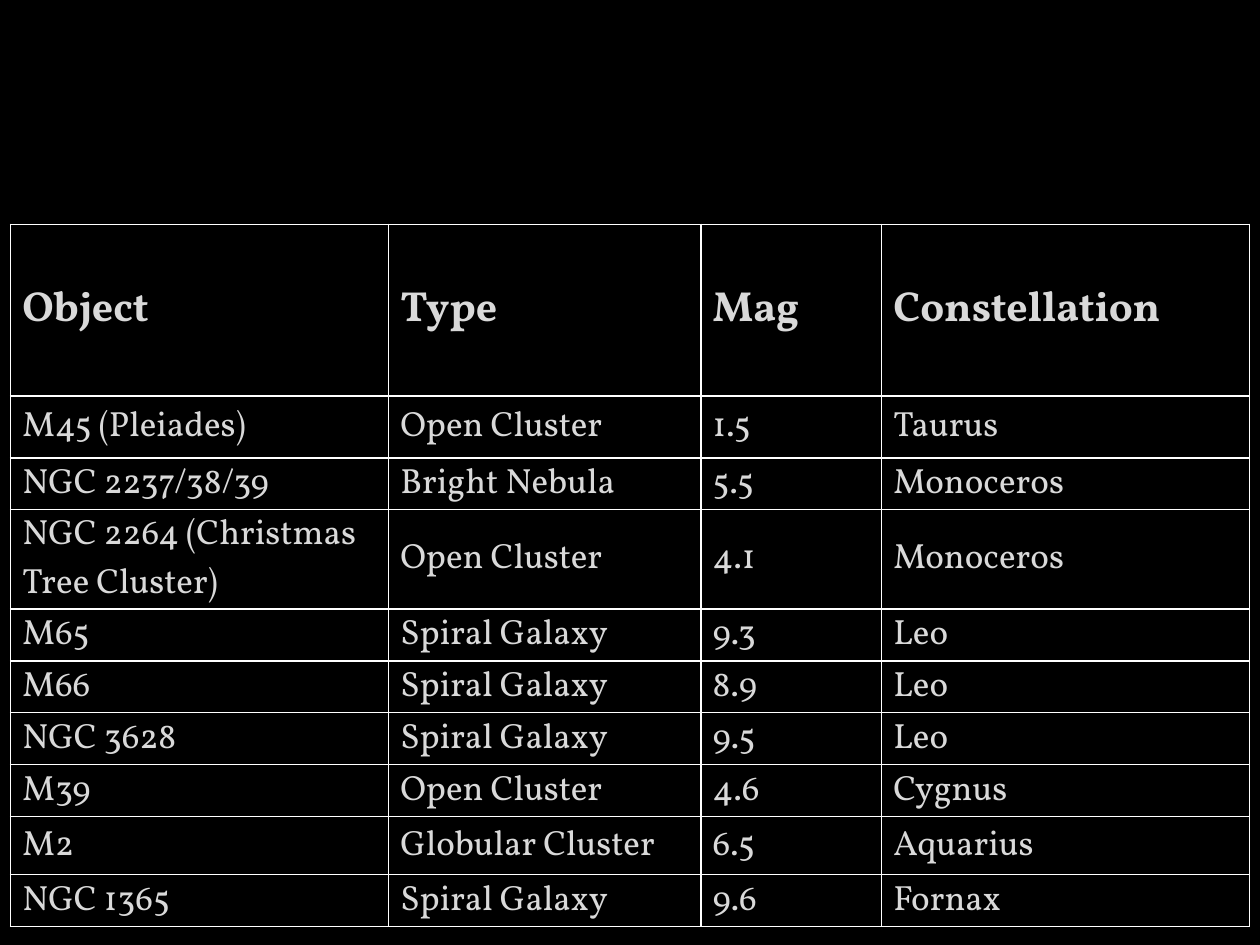
from lxml import etree
from pptx import Presentation
from pptx import util as u
from pptx.dml.color import RGBColor
from pptx.enum import text
from pptx.oxml import ns

BLACK = RGBColor(0x00, 0x00, 0x00)
WHITE = RGBColor(0xFF, 0xFF, 0xFF)
LIGHT_GREY = RGBColor(0xD9, 0xD9, 0xD9)
FONT = "Vollkorn"

COLUMN_WIDTHS = [216, 178.5, 103.2, 210.3]
ROW_HEIGHTS = [98, 35.4] + [29.7] * 6 + [33.1, 29.7]
TARGETS = [
    ("Object", "Type", "Mag", "Constellation"),
    ("M45 (Pleiades)", "Open Cluster", "1.5", "Taurus"),
    ("NGC 2237/38/39", "Bright Nebula", "5.5", "Monoceros"),
    ("NGC 2264 (Christmas Tree Cluster)", "Open Cluster", "4.1", "Monoceros"),
    ("M65", "Spiral Galaxy", "9.3", "Leo"),
    ("M66", "Spiral Galaxy", "8.9", "Leo"),
    ("NGC 3628", "Spiral Galaxy", "9.5", "Leo"),
    ("M39", "Open Cluster", "4.6", "Cygnus"),
    ("M2", "Globular Cluster", "6.5", "Aquarius"),
    ("NGC 1365", "Spiral Galaxy", "9.6", "Fornax"),
]
CELL_FORMAT = {
    "vertical_anchor": text.MSO_ANCHOR.MIDDLE,
    "margin_left": u.Pt(6.8),
    "margin_top": u.Pt(0.75),
    "margin_right": u.Pt(0.75),
    "margin_bottom": u.Pt(0),
}


def apply_format(target, values):
    """Set every named attribute on the target."""
    for name, value in values.items():
        setattr(target, name, value)


def format_font(paragraph, size, color, bold):
    """Give a paragraph its font, size, weight and colour."""
    apply_format(paragraph.font, {"name": FONT, "size": u.Pt(size), "bold": bold})
    paragraph.font.color.rgb = color


def add_borders(cell):
    """Draw a thin white line on all four sides of a cell."""
    properties = cell._tc.get_or_add_tcPr()
    for position, side in enumerate(("lnL", "lnR", "lnT", "lnB")):
        line = etree.Element(ns.qn(f"a:{side}"), w=str(u.Pt(1)))
        fill = etree.SubElement(line, ns.qn("a:solidFill"))
        etree.SubElement(fill, ns.qn("a:srgbClr"), val=str(WHITE))
        properties.insert(position, line)


def fill_cell(cell, wording, is_header):
    """Write and format one table cell."""
    cell.text = wording
    apply_format(cell, CELL_FORMAT)
    format_font(cell.text_frame.paragraphs[0], 24 if is_header else 20,
                LIGHT_GREY, is_header)
    cell.fill.background()
    add_borders(cell)


def add_target_table(slide):
    """Add the table of observing targets."""
    table = slide.shapes.add_table(
        len(TARGETS), len(COLUMN_WIDTHS), u.Pt(6), u.Pt(128.2),
        u.Pt(sum(COLUMN_WIDTHS)), u.Pt(sum(ROW_HEIGHTS))).table
    table.horz_banding = False
    for column, width in zip(table.columns, COLUMN_WIDTHS):
        column.width = u.Pt(width)
    for row, height, target in zip(table.rows, ROW_HEIGHTS, TARGETS):
        row.height = u.Pt(height)
        for cell, wording in zip(row.cells, target):
            fill_cell(cell, wording, target is TARGETS[0])


def main():
    """Build the target list slide and save it."""
    presentation = Presentation()
    apply_format(presentation, {"slide_width": u.Pt(720), "slide_height": u.Pt(540)})
    slide = presentation.slides.add_slide(presentation.slide_layouts[6])
    slide.background.fill.solid()
    slide.background.fill.fore_color.rgb = BLACK
    add_target_table(slide)
    presentation.save("out.pptx")


if __name__ == "__main__":
    main()
